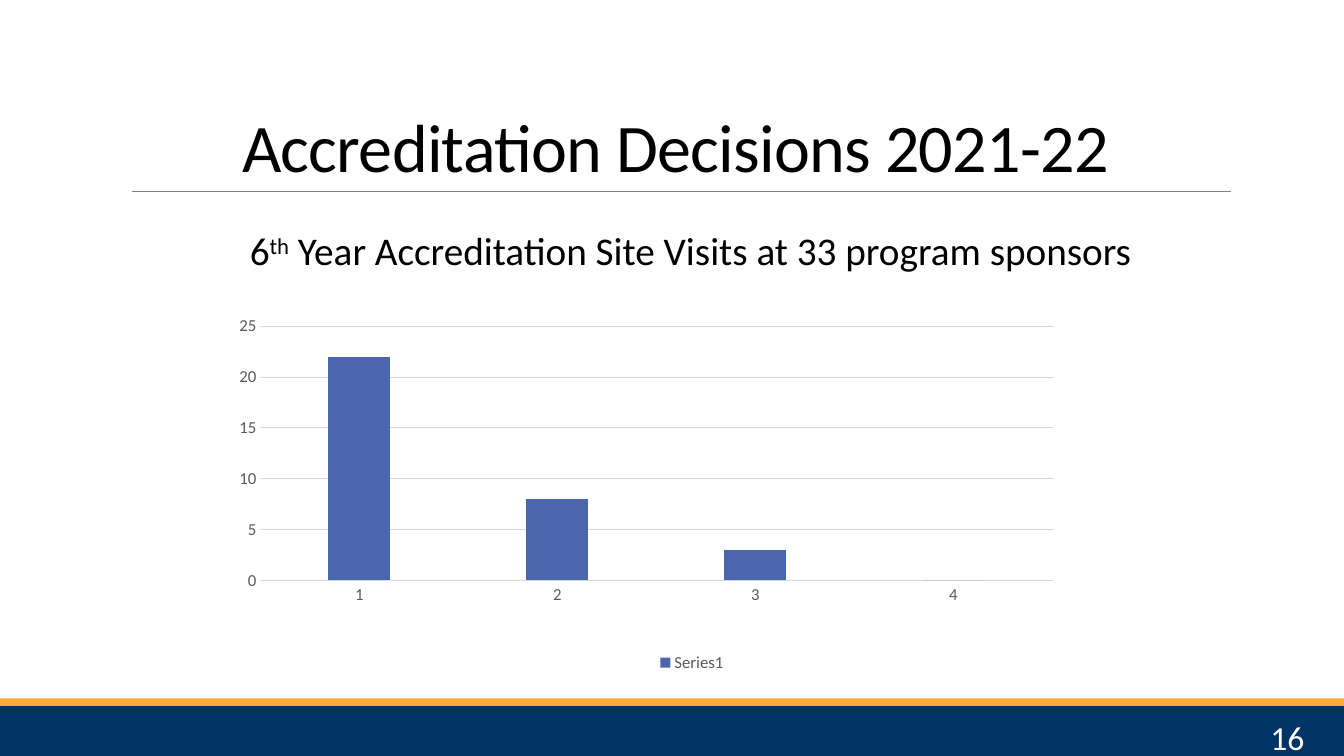
import pptx
import pptx.util
import pptx.dml.color
import pptx.chart.data
import pptx.enum.chart
import pptx.enum.shapes
import pptx.enum.text
import pptx.oxml
import pptx.oxml.ns
from pptx.util import Cm, Pt

FONT = "Calibri"
TITLE = "Accreditation Decisions 2021-22"
SUBTITLE = [("6", 0), ("th", 30), (" Year Accreditation Site Visits at 33 program sponsors", 0)]
PAGE_NUMBER = "16"
DECISIONS = {"1": 22, "2": 8, "3": 3, "4": 0}
SERIES_NAME = "Series1"
PLOT_LAYOUT = {"x": 0.039, "y": 0.413, "w": 0.846, "h": 0.426}

WIDTH, HEIGHT = 33.87, 19.05
BANDS = [(17.78, 1.27, "003366"), (17.6, 0.18, "FAAC35")]
RULE_LEFT, RULE_RIGHT, RULE_TOP = 3.33, 31.01, 4.83
TITLE_BOX = (3.05, 0.79, 27.94, 4.04)
SUBTITLE_BOX = (3.05, 5.59, 28.37, 11.18)
CHART_BOX = (5.64, 2.01, 23.6, 15.04)
NUMBER_BOX = (29.49, 17.93, 3.63, 1.02)

Align = pptx.enum.text.PP_ALIGN
Anchor = pptx.enum.text.MSO_ANCHOR


def color(value):
    return pptx.dml.color.RGBColor.from_string(value)


def style_font(font, size, value):
    font.name = FONT
    font.size = Pt(size)
    font.color.rgb = color(value)


def add_text(page, place, spans, size, value, align, anchor=Anchor.TOP):
    box = page.shapes.add_textbox(*map(Cm, place))
    frame = box.text_frame
    frame.word_wrap = True
    frame.vertical_anchor = anchor
    para = frame.paragraphs[0]
    para.alignment = align
    for words, baseline in spans:
        span = para.add_run()
        span.text = words
        style_font(span.font, size, value)
        if baseline:
            span.font._element.set("baseline", str(baseline * 1000))
    return frame


def add_band(page, top, height, value):
    band = page.shapes.add_shape(
        pptx.enum.shapes.MSO_SHAPE.RECTANGLE, 0, Cm(top), Cm(WIDTH), Cm(height))
    band.shadow.inherit = False
    band.fill.solid()
    band.fill.fore_color.rgb = color(value)
    band.line.fill.background()


def add_rule(page):
    rule = page.shapes.add_connector(
        pptx.enum.shapes.MSO_CONNECTOR.STRAIGHT,
        Cm(RULE_LEFT), Cm(RULE_TOP), Cm(RULE_RIGHT), Cm(RULE_TOP))
    rule.line.color.rgb = color("808080")
    rule.line.width = Pt(0.5)
    rule._element.spPr.append(pptx.oxml.parse_xml(
        f'<a:effectLst {pptx.oxml.ns.nsdecls("a")}/>'))


def place_plot(chart):
    area = chart._chartSpace.chart.plotArea
    for layout in area.findall(pptx.oxml.ns.qn("c:layout")):
        area.remove(layout)
    modes = '<c:layoutTarget val="inner"/><c:xMode val="edge"/><c:yMode val="edge"/>'
    sizes = "".join(f'<c:{key} val="{value}"/>' for key, value in PLOT_LAYOUT.items())
    area.insert(0, pptx.oxml.parse_xml(
        f'<c:layout {pptx.oxml.ns.nsdecls("c")}><c:manualLayout>'
        f'{modes}{sizes}</c:manualLayout></c:layout>'))


def add_decision_chart(page):
    data = pptx.chart.data.CategoryChartData()
    data.categories = list(DECISIONS)
    data.add_series(SERIES_NAME, list(DECISIONS.values()))
    kinds = pptx.enum.chart
    chart = page.shapes.add_chart(
        kinds.XL_CHART_TYPE.COLUMN_CLUSTERED, *map(Cm, CHART_BOX), data).chart
    chart.has_title = False
    style_font(chart.font, 10, "000000")
    chart.has_legend = True
    chart.legend.position = kinds.XL_LEGEND_POSITION.BOTTOM
    chart.legend.include_in_layout = False
    style_font(chart.legend.font, 12, "595959")

    for axis in (chart.category_axis, chart.value_axis):
        axis.major_tick_mark = kinds.XL_TICK_MARK.NONE
        axis.minor_tick_mark = kinds.XL_TICK_MARK.NONE
        style_font(axis.tick_labels.font, 12, "595959")
    values = chart.value_axis
    values.minimum_scale, values.maximum_scale, values.major_unit = 0, 25, 5
    values.format.line.fill.background()
    for line in (chart.category_axis.format.line, values.major_gridlines.format.line):
        line.color.rgb = color("D9D9D9")
        line.width = Pt(0.75)

    plot = chart.plots[0]
    plot.gap_width, plot.overlap = 219, -27
    plot.vary_by_categories = False
    bars = plot.series[0].format.fill
    bars.solid()
    bars.fore_color.rgb = color("4A66AC")
    place_plot(chart)


def main():
    deck = pptx.Presentation()
    deck.slide_width, deck.slide_height = Cm(WIDTH), Cm(HEIGHT)
    page = deck.slides.add_slide(deck.slide_layouts[6])
    for band in BANDS:
        add_band(page, *band)
    add_rule(page)

    title = add_text(page, TITLE_BOX, [(TITLE, 0)], 48.6, "000000", Align.CENTER, Anchor.BOTTOM)
    title.paragraphs[0].line_spacing = 0.85
    title.paragraphs[0].runs[0].font._element.set("spc", "-50")

    subtitle = add_text(page, SUBTITLE_BOX, SUBTITLE, 28, "000000", Align.CENTER)
    subtitle.margin_left = subtitle.margin_right = 0
    subtitle.paragraphs[0]._p.get_or_add_pPr().set("marL", str(Cm(0.33)))

    add_decision_chart(page)
    add_text(page, NUMBER_BOX, [(PAGE_NUMBER, 0)], 24, "FFFFFF", Align.RIGHT)
    deck.save("out.pptx")


if __name__ == "__main__":
    main()
